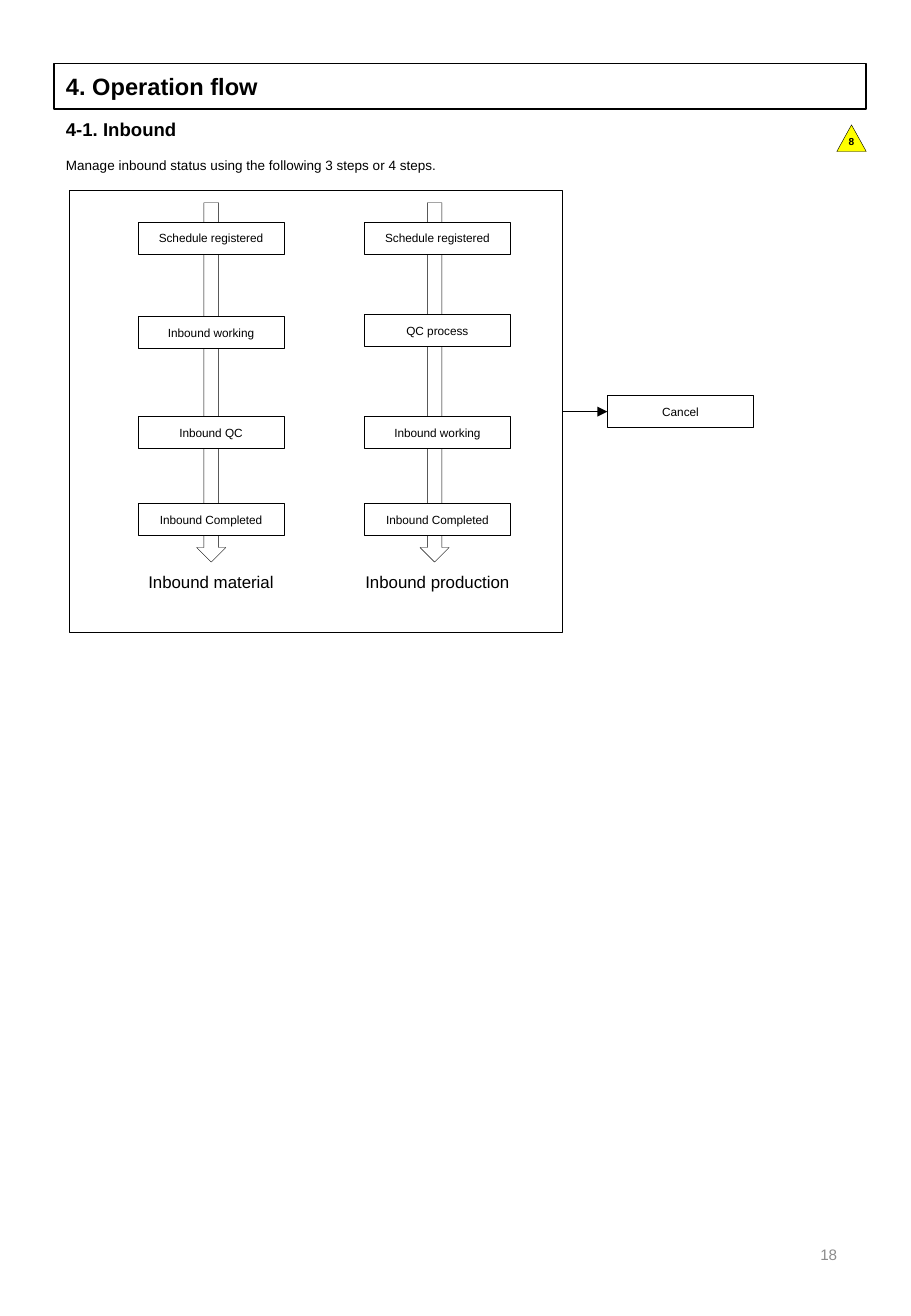
from lxml.etree import SubElement
from pptx import Presentation
from pptx.dml.color import RGBColor
from pptx.enum.shapes import MSO_CONNECTOR, MSO_SHAPE
from pptx.enum.text import MSO_ANCHOR, PP_ALIGN
from pptx.oxml.ns import qn
from pptx.util import Pt

# Content
TITLE = "4. Operation flow"
HEADING = "4-1. Inbound"
INTRO = "Manage inbound status using the following 3 steps or 4 steps."
CANCEL = "Cancel"
REVISION = "8"
PAGE = "18"
FLOWS = [
    dict(name="Inbound material", left=81.7, arrow_x=125.2, label_x=125, label_w=90,
         steps=[("Schedule registered", 131.7), ("Inbound working", 187.5),
                ("Inbound QC", 246.8), ("Inbound Completed", 298.5)]),
    dict(name="Inbound production", left=215.9, arrow_x=257.6, label_x=259.2, label_w=105,
         steps=[("Schedule registered", 131.7), ("QC process", 186.4),
                ("Inbound working", 246.8), ("Inbound Completed", 298.5)]),
]

# Layout, in points
MARGIN, BODY_W = 32, 481.5
FRAME = (41, 113, 292.5, 262)
BOX_W, BOX_H = 86.8, 19
ARROW_TOP, ARROW_LEN, ARROW_W = 120.2, 213, 17.3
BLACK, WHITE, YELLOW, GREY = "000000", "FFFFFF", "FFFF00", "8C8C8C"

prs = Presentation()
prs.slide_width, prs.slide_height = Pt(540), Pt(780)
s = prs.slides.add_slide(prs.slide_layouts[6])


def color(value):
    return RGBColor.from_string(value)


def write(sp, text, size, bold=False, rgb=BLACK, align=PP_ALIGN.LEFT,
          anchor=MSO_ANCHOR.MIDDLE, wrap=True):
    tf = sp.text_frame
    tf.word_wrap = wrap
    tf.vertical_anchor = anchor
    p = tf.paragraphs[0]
    p.alignment = align
    r = p.add_run()
    r.text = text
    r.font.name, r.font.size, r.font.bold = "Arial", Pt(size), bold
    r.font.color.rgb = color(rgb)


def add_text(x, y, w, h, text, size, **fmt):
    sp = s.shapes.add_textbox(Pt(x), Pt(y), Pt(w), Pt(h))
    write(sp, text, size, **fmt)


def add_shape(kind, x, y, w, h, fill=None, line=0.25):
    sp = s.shapes.add_shape(kind, Pt(x), Pt(y), Pt(w), Pt(h))
    sp.shadow.inherit = False
    if fill:
        sp.fill.solid()
        sp.fill.fore_color.rgb = color(fill)
    else:
        sp.fill.background()
    sp.line.color.rgb = color(BLACK)
    sp.line.width = Pt(line)
    return sp


def add_step(x, y, text, fill=WHITE):
    sp = add_shape(MSO_SHAPE.RECTANGLE, x, y, BOX_W, BOX_H, fill)
    write(sp, text, 7, align=PP_ALIGN.CENTER)
    return sp


# Headings and page number
title = add_shape(MSO_SHAPE.RECTANGLE, MARGIN, 37.6, BODY_W, 27.2, line=1)
write(title, TITLE, 14, bold=True)
add_text(MARGIN, 66.2, BODY_W, 21, HEADING, 11, bold=True, anchor=MSO_ANCHOR.TOP)
add_text(MARGIN, 89.3, BODY_W, 17, INTRO, 8, anchor=MSO_ANCHOR.TOP)
add_text(381.6, 723, 121.7, 41.5, PAGE, 9, rgb=GREY, align=PP_ALIGN.RIGHT)

# Revision mark
mark = add_shape(MSO_SHAPE.ISOSCELES_TRIANGLE, 496, 74, 17.5, 15.8, YELLOW)
mark.text_frame.margin_top, mark.text_frame.margin_bottom = Pt(0), Pt(3.6)
write(mark, REVISION, 6, bold=True, align=PP_ALIGN.CENTER, wrap=False)

# Flows inside the frame
frame = add_shape(MSO_SHAPE.RECTANGLE, *FRAME, fill=WHITE)
for flow in FLOWS:
    arrow = add_shape(MSO_SHAPE.RIGHT_ARROW, flow["arrow_x"] - ARROW_LEN / 2,
                      ARROW_TOP + (ARROW_LEN - ARROW_W) / 2, ARROW_LEN, ARROW_W, WHITE)
    arrow.rotation = 90
    for step, top in flow["steps"]:
        add_step(flow["left"], top, step)
    add_text(flow["label_x"] - flow["label_w"] / 2, 335.5, flow["label_w"], 19.4,
             flow["name"], 10, align=PP_ALIGN.CENTER, anchor=MSO_ANCHOR.TOP, wrap=False)

# Cancel branch, level with the middle of the frame
frame_mid = FRAME[1] + FRAME[3] / 2
cancel = add_step(360, frame_mid - BOX_H / 2, CANCEL, fill=None)
link = s.shapes.add_connector(MSO_CONNECTOR.STRAIGHT, 0, 0, 0, 0)
link.begin_connect(frame, 3)
link.end_connect(cancel, 1)
link.line.color.rgb = color(BLACK)
link.line.width = Pt(0.5)
SubElement(link.line._get_or_add_ln(), qn("a:tailEnd"), type="triangle")
SubElement(link._element.spPr, qn("a:effectLst"))

prs.save("out.pptx")
